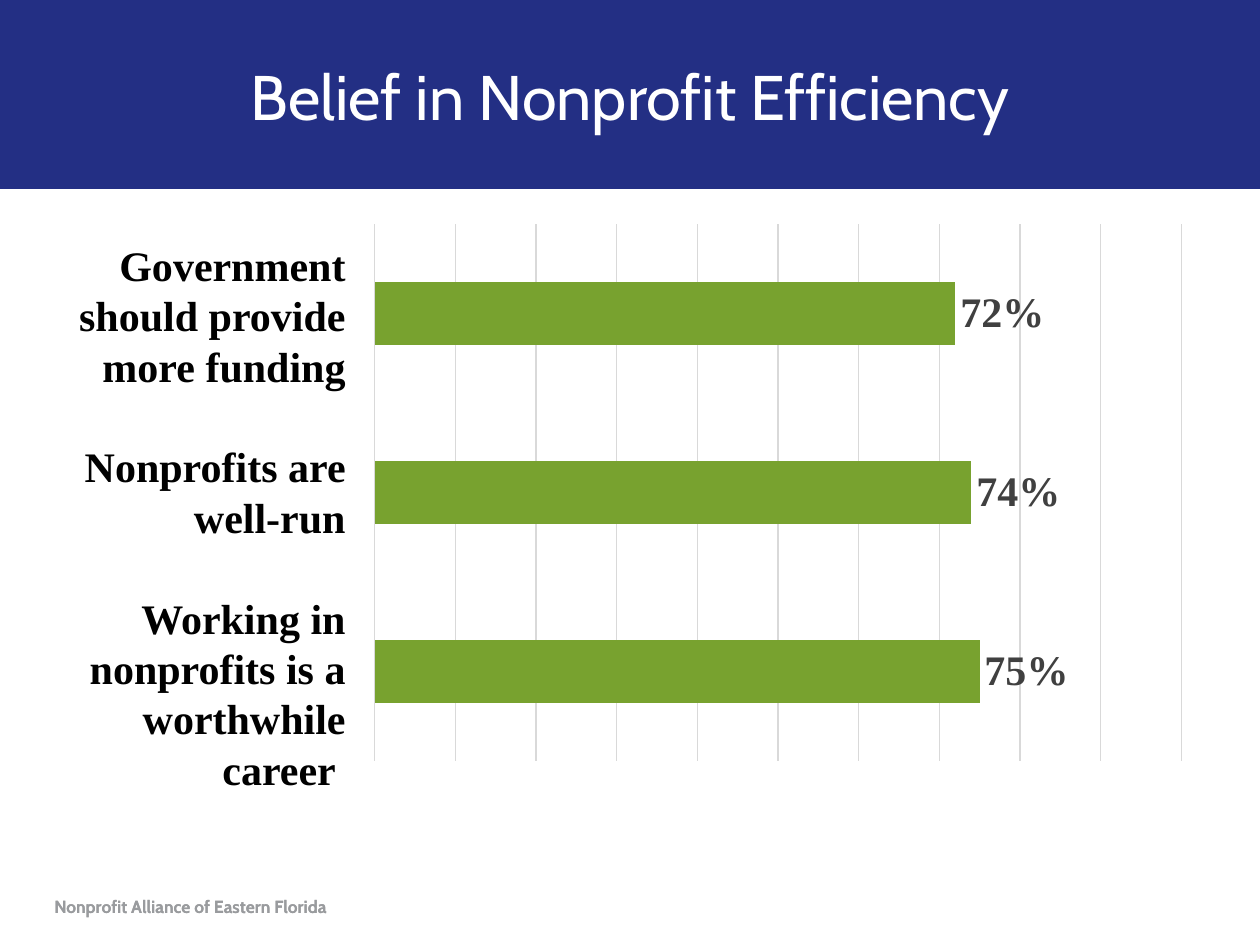
from dataclasses import dataclass

import pptx
import pptx.chart.data
import pptx.dml.color
import pptx.enum.chart
import pptx.enum.shapes
import pptx.enum.text
import pptx.util

EMU_PER_PX = 914400 / 126
ALIGN = pptx.enum.text.PP_ALIGN
ANCHOR = pptx.enum.text.MSO_ANCHOR


@dataclass(frozen=True)
class Theme:
    banner: str = "232F84"
    title: str = "FFFFFF"
    statement: str = "000000"
    bar: str = "78A22F"
    value: str = "404040"
    grid: str = "D9D9D9"
    heading_font: str = "Cabin"
    body_font: str = "Times New Roman"
    title_size: int = 36
    body_size: int = 24
    body_line: float = 28.8
    footer_size: int = 10
    chart_size: int = 10
    grid_width: float = 0.75


@dataclass(frozen=True)
class Area:
    left: int
    top: int
    width: int
    height: int

    def emu(self) -> list[int]:
        return [round(side * EMU_PER_PX)
                for side in (self.left, self.top, self.width, self.height)]


@dataclass(frozen=True)
class Footer:
    area: Area
    color: str
    wrap: bool


@dataclass(frozen=True)
class Belief:
    statement: str
    share: float


THEME = Theme()
BANNER = Area(0, 0, 1260, 189)
TITLE = Area(87, 4, 1086, 183)
STATEMENTS = Area(9, 233, 349, 522)
CHART = Area(358, 213, 840, 559)
FOOTER_TEXT = "Nonprofit Alliance of Eastern Florida"
FOOTERS = [
    Footer(Area(48, 890, 292, 34), "A6A6A6", True),
    Footer(Area(48, 890, 325, 34), "999B9E", False),
]
BELIEFS = [
    Belief("Government should provide more funding", 0.72),
    Belief("Nonprofits are well-run", 0.74),
    Belief("Working in nonprofits is a worthwhile career ", 0.75),
]


def rgb(color: str) -> pptx.dml.color.RGBColor:
    return pptx.dml.color.RGBColor.from_string(color)


def style_font(font, name: str, size: float, color: str, bold: bool = False) -> None:
    font.name = name
    font.size = pptx.util.Pt(size)
    font.bold = bold
    font.color.rgb = rgb(color)


def add_text(page, area: Area, paragraphs: list[str], *, font: str, size: float,
             color: str, bold: bool = False, align=ALIGN.LEFT, anchor=ANCHOR.TOP,
             wrap: bool = True, inset: tuple[float, float] = (0.1, 0.05),
             line: float | None = None, gap: float = 0) -> None:
    """Add a text box; line and gap are points, inset is inches across and down."""
    box = page.shapes.add_textbox(*area.emu())
    frame = box.text_frame
    frame.word_wrap = wrap
    frame.vertical_anchor = anchor
    frame.margin_left = frame.margin_right = pptx.util.Inches(inset[0])
    frame.margin_top = frame.margin_bottom = pptx.util.Inches(inset[1])
    for index, text in enumerate(paragraphs):
        para = frame.add_paragraph() if index else frame.paragraphs[0]
        para.alignment = align
        if line:
            para.line_spacing = pptx.util.Pt(line)
        if index and gap:
            para.space_before = pptx.util.Pt(gap)
        span = para.add_run()
        span.text = text
        style_font(span.font, font, size, color, bold)


def add_banner(page) -> None:
    banner = page.shapes.add_shape(
        pptx.enum.shapes.MSO_SHAPE.RECTANGLE, *BANNER.emu())
    banner.shadow.inherit = False
    banner.fill.solid()
    banner.fill.fore_color.rgb = rgb(THEME.banner)
    banner.line.fill.background()


def add_belief_chart(page, beliefs: list[Belief]) -> None:
    """Add the bars; the category axis runs upwards, so the last belief comes first."""
    chart_data = pptx.chart.data.CategoryChartData(number_format="0%")
    chart_data.categories = [str(number + 1) for number in range(len(beliefs))]
    chart_data.add_series("Series 1", [belief.share for belief in reversed(beliefs)])
    chart = page.shapes.add_chart(
        pptx.enum.chart.XL_CHART_TYPE.BAR_CLUSTERED, *CHART.emu(), chart_data).chart
    chart.has_title = False
    chart.has_legend = False
    style_font(chart.font, THEME.body_font, THEME.chart_size, THEME.statement)

    chart.category_axis.visible = False
    axis = chart.value_axis
    axis.visible = False
    axis.minimum_scale, axis.maximum_scale, axis.major_unit = 0, 1, 0.1
    axis.has_major_gridlines = True
    axis.major_gridlines.format.line.color.rgb = rgb(THEME.grid)
    axis.major_gridlines.format.line.width = pptx.util.Pt(THEME.grid_width)

    plot = chart.plots[0]
    plot.gap_width = 182
    plot.vary_by_categories = False
    series = plot.series[0]
    series.format.fill.solid()
    series.format.fill.fore_color.rgb = rgb(THEME.bar)
    labels = series.data_labels
    labels.show_value = True
    labels.number_format = "0%"
    labels.number_format_is_linked = False
    labels.position = pptx.enum.chart.XL_LABEL_POSITION.OUTSIDE_END
    style_font(labels.font, THEME.body_font, THEME.body_size, THEME.value, bold=True)


def main() -> None:
    deck = pptx.Presentation()
    deck.slide_width = pptx.util.Inches(10)
    deck.slide_height = pptx.util.Inches(7.5)
    page = deck.slides.add_slide(deck.slide_layouts[6])

    add_banner(page)
    add_text(page, TITLE, ["Belief in Nonprofit Efficiency"],
             font=THEME.heading_font, size=THEME.title_size, color=THEME.title,
             align=ALIGN.CENTER, anchor=ANCHOR.MIDDLE)
    for footer in FOOTERS:
        add_text(page, footer.area, [FOOTER_TEXT], font=THEME.heading_font,
                 size=THEME.footer_size, color=footer.color, bold=True,
                 wrap=footer.wrap, inset=(0.05, 0.05))
    add_text(page, STATEMENTS, [belief.statement for belief in BELIEFS],
             font=THEME.body_font, size=THEME.body_size, color=THEME.statement,
             bold=True, align=ALIGN.RIGHT, line=THEME.body_line, gap=THEME.body_line)
    add_belief_chart(page, BELIEFS)
    deck.save("out.pptx")


if __name__ == "__main__":
    main()
